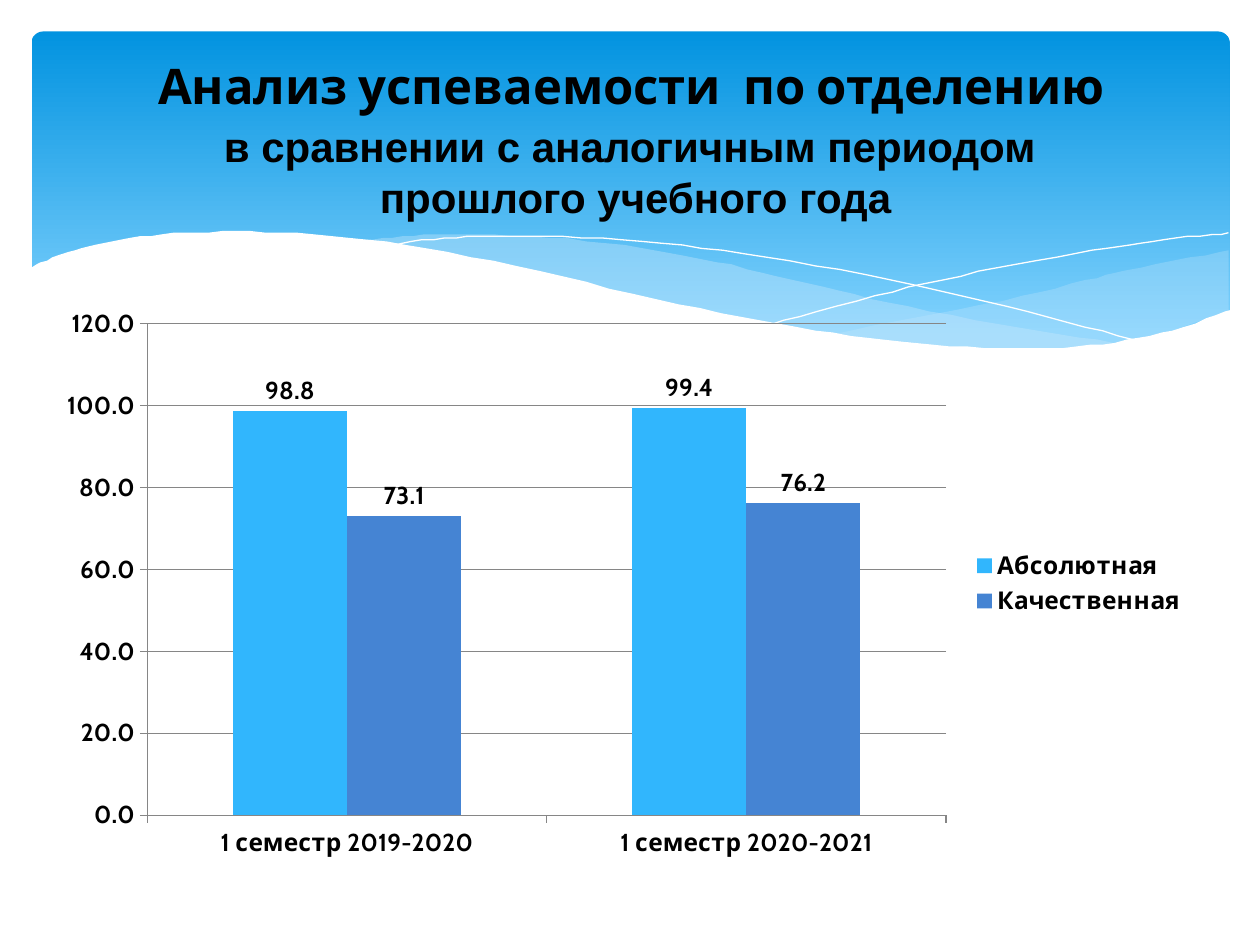
from lxml import etree
from pptx import Presentation
from pptx import util as u
from pptx.chart.data import CategoryChartData
from pptx.dml.color import RGBColor
from pptx.enum import chart as ch, shapes, text
from pptx.oxml import parse_xml
from pptx.oxml.ns import nsdecls, qn

Pt = u.Pt


def rgb(value):
    return RGBColor.from_string(value)


def smooth_curve(knots, steps=6):
    """Return points of a Catmull-Rom curve that runs through the knots."""
    ends = [knots[0], *knots, knots[-1]]
    points = [knots[0]]
    for a, b, c, d in zip(ends, ends[1:], ends[2:], ends[3:]):
        for i in range(1, steps + 1):
            t = i / steps
            points.append(tuple(
                (2 * q + (r - p) * t + (2 * p - 5 * q + 4 * r - w) * t**2
                 + (3 * q - p - 3 * r + w) * t**3) / 2
                for p, q, r, w in zip(a, b, c, d)))
    return points


class Deck:
    font = "Cabin"
    ink = "000000"
    grid = "868686"

    def __init__(self, width, height):
        self.prs = Presentation()
        self.prs.slide_width, self.prs.slide_height = Pt(width), Pt(height)
        self.s = self.prs.slides.add_slide(self.prs.slide_layouts[5])

    def style_font(self, font, size, name=None):
        values = {"size": Pt(size), "name": name or self.font, "bold": True}
        for key, value in values.items():
            setattr(font, key, value)
        font.color.rgb = rgb(self.ink)

    def fill_text(self, sp, lines, size, name=None, wrap=True):
        tf = sp.text_frame
        frame = {"word_wrap": wrap, "auto_size": text.MSO_AUTO_SIZE.NONE,
                 "vertical_anchor": text.MSO_ANCHOR.MIDDLE}
        for key, value in frame.items():
            setattr(tf, key, value)
        for i, line in enumerate(lines):
            p = tf.add_paragraph() if i else tf.paragraphs[0]
            p.alignment = text.PP_ALIGN.CENTER
            r = p.add_run()
            r.text = line
            self.style_font(r.font, size, name)

    def title(self, box, line, size):
        sp = self.s.shapes.title
        for key, value in zip(("left", "top", "width", "height"), box):
            setattr(sp, key, Pt(value))
        self.s.shapes._spTree.append(sp._element)  # in front of the banner
        self.fill_text(sp, [line], size)

    def text_box(self, box, lines, size, name):
        sp = self.s.shapes.add_textbox(*map(Pt, box))
        self.fill_text(sp, lines, size, name, wrap=False)

    def banner(self, box, radius, stops):
        sp = self.s.shapes.add_shape(
            shapes.MSO_SHAPE.ROUNDED_RECTANGLE, *map(Pt, box))
        sp.shadow.inherit = False
        sp.adjustments[0] = radius
        sp.line.fill.background()
        sp.fill.gradient()
        sp.fill.gradient_angle = 270
        for stop, (position, color) in zip(sp.fill.gradient_stops, stops):
            stop.position = position
            stop.color.rgb = rgb(color)

    def outline(self, points, closed):
        builder = self.s.shapes.build_freeform(*points[0], scale=Pt(1))
        builder.add_line_segments(points[1:], close=closed)
        sp = builder.convert_to_shape()
        sp.shadow.inherit = False
        return sp

    def wave(self, edges, color, opacity=None):
        """Fill the area enclosed by curved edges joined end to end."""
        points = [point for edge in edges for point in smooth_curve(edge)]
        sp = self.outline(points, True)
        sp.line.fill.background()
        sp.fill.solid()
        sp.fill.fore_color.rgb = rgb(color)
        if opacity:
            clr = sp._element.spPr.find(".//" + qn("a:srgbClr"))
            etree.SubElement(clr, qn("a:alpha")).set("val", str(opacity * 1000))

    def curve(self, knots, color):
        sp = self.outline(smooth_curve(knots), False)
        sp.fill.background()
        sp.line.color.rgb = rgb(color)
        sp.line.width = Pt(0)

    def column_chart(self, box, cats, series, size):
        data = CategoryChartData(number_format="0.0")
        data.categories = cats
        for name, values, _ in series:
            data.add_series(name, values)
        chart = self.s.shapes.add_chart(
            ch.XL_CHART_TYPE.COLUMN_CLUSTERED, *map(Pt, box), data).chart
        self.style_font(chart.font, size)
        chart.has_title = False
        chart.has_legend = True
        chart.legend.position = ch.XL_LEGEND_POSITION.RIGHT
        chart.legend.include_in_layout = False

        plot = chart.plots[0]
        plot.gap_width, plot.overlap, plot.vary_by_categories = 150, 0, False
        for ser, (_, _, color) in zip(plot.series, series):
            ser.format.fill.solid()
            ser.format.fill.fore_color.rgb = rgb(color)
            labels = ser.data_labels
            labels.show_value = True
            labels.number_format, labels.number_format_is_linked = "0.0", False
            labels.position = ch.XL_LABEL_POSITION.OUTSIDE_END
            self.style_font(labels.font, size)

        val, cat = chart.value_axis, chart.category_axis
        val.minimum_scale, val.maximum_scale, val.major_unit = 0, 120, 20
        val.has_major_gridlines = True
        for axis in (val, cat):
            axis.major_tick_mark = ch.XL_TICK_MARK.OUTSIDE
            self.style_font(axis.tick_labels.font, size)
        for part in (val, cat, val.major_gridlines):
            part.format.line.color.rgb = rgb(self.grid)
            part.format.line.width = Pt(0.75)

        # The banner shows through the chart.
        clear = f"<c:spPr {nsdecls('c', 'a')}><a:noFill/><a:ln><a:noFill/></a:ln></c:spPr>"
        area = chart._chartSpace.find(qn("c:chart"))
        area.addnext(parse_xml(clear))
        area.find(qn("c:plotArea")).append(parse_xml(clear))


def main():
    deck = Deck(720, 540)
    deck.banner((18, 18, 684.7, 194.4), 0.034, [(0, "0293E0"), (0.9, "83D3FE")])

    pale, white = "C6E7FC", "FFFFFF"
    deck.wave([
        [(702.5, 143.3), (652.5, 152.5), (620, 160.5), (561, 174.2), (476, 190.8)],
        [(476, 190.8), (517, 195.3), (562, 199.2), (601, 199.4), (640, 196.5),
         (673, 188), (702.5, 178)],
    ], pale, 29)
    deck.wave([
        [(643, 196.6), (581, 187.2), (508, 172.8), (453, 159.8), (400, 147.6),
         (335, 137.5), (274, 133.9), (236, 134.6), (206, 137.5)],
        [(206, 137.5), (261, 146.2), (323, 159.8), (408, 178.6), (479, 191.5),
         (539, 198), (589, 200.2), (643, 196.6)],
    ], pale, 40)
    deck.curve([(222.5, 140.4), (254, 136), (300, 134.6), (367, 138.2), (438, 146.9),
                (523, 162.7), (598, 180.7), (653, 195.8)], white)
    deck.curve([(441.5, 185), (500, 169.2), (559, 155.5), (623.5, 143.3), (665, 136.8),
                (702, 133.2)], white)
    deck.wave([
        [(16.5, 153.4), (33, 146.2), (54, 140.4), (86, 134.6), (127, 132.5),
         (180, 133.9), (244, 141.8), (322, 158.4), (400, 176.4), (466, 188.6),
         (523, 195.8), (582, 199.4), (630, 196.6), (670, 188.6), (703.5, 177.1)],
        [(703.5, 236.9), (16.5, 236.9)],
    ], white)

    deck.title((36.7, 25.9, 648, 45.4), "Анализ успеваемости  по отделению", 28)
    deck.text_box((120.2, 65.5, 486, 64.8),
                  ["в сравнении с аналогичным периодом ", "прошлого учебного года"],
                  24, "Arial")
    deck.column_chart(
        (25.2, 169.9, 659.5, 326.9),
        ["1 семестр 2019-2020", "1 семестр 2020-2021"],
        [("Абсолютная", (98.8, 99.4), "31B6FD"),
         ("Качественная", (73.1, 76.2), "4584D3")], 14)
    deck.prs.save("out.pptx")


if __name__ == "__main__":
    main()
